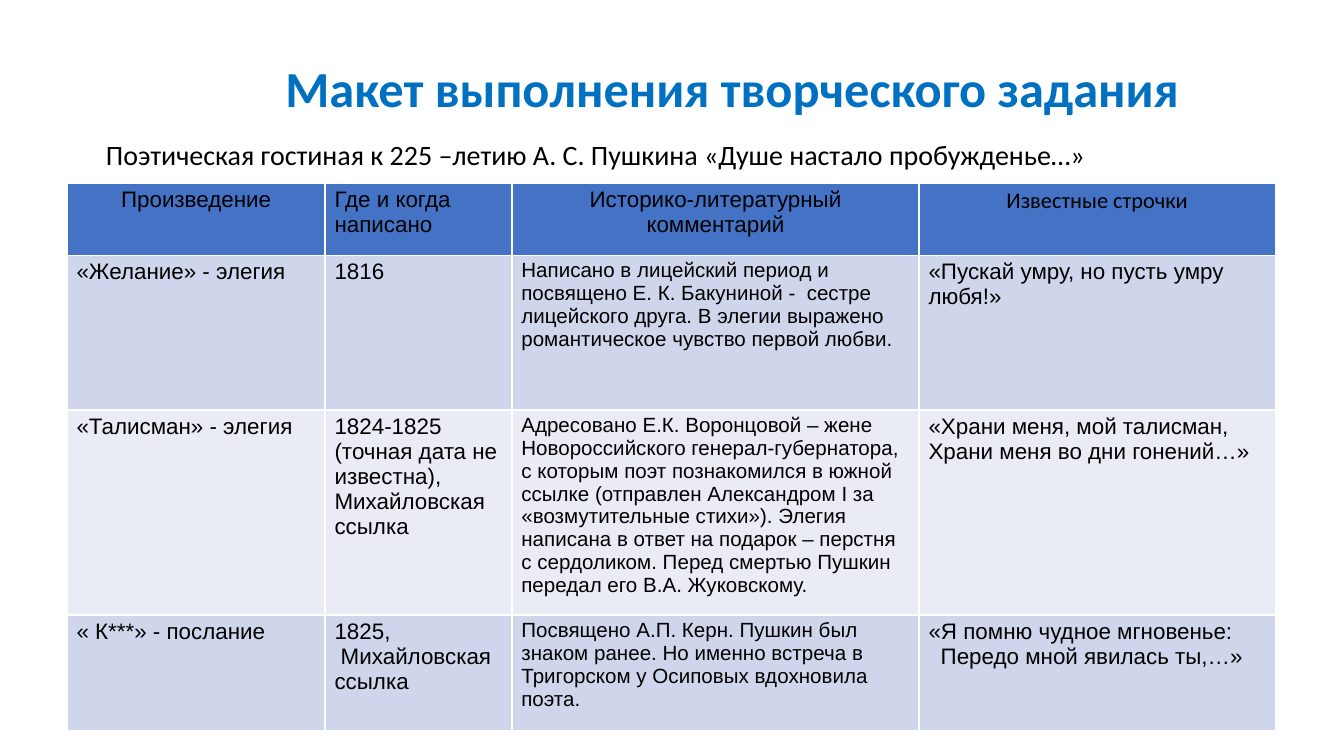
from lxml import etree
from pptx import Presentation
from pptx.dml.color import RGBColor
from pptx.enum import text
from pptx.oxml import ns
from pptx.util import Inches, Pt

COLORS = {
    "title": "0070C0",
    "text": "000000",
    "header": "4472C4",
    "odd": "CFD5EA",
    "even": "E9EBF5",
    "border": "FFFFFF",
}
LEFT, CENTER = text.PP_ALIGN.LEFT, text.PP_ALIGN.CENTER


def set_font(font, name, size, color="text", bold=False):
    font.name = name
    font.size = Pt(size)
    font.bold = bold
    font.color.rgb = RGBColor.from_string(COLORS[color])


def add_border(cell, side):
    line = etree.SubElement(cell._tc.get_or_add_tcPr(), ns.qn(f"a:ln{side}"), w=str(Pt(1)))
    fill = etree.SubElement(line, ns.qn("a:solidFill"))
    etree.SubElement(fill, ns.qn("a:srgbClr"), val=COLORS["border"])


# Widescreen slide, 16:9
prs = Presentation()
prs.slide_width = Inches(10)
prs.slide_height = Inches(10) * 9 // 16
slide = prs.slides.add_slide(prs.slide_layouts[6])

# Title, led by a larger space
title = slide.shapes.add_textbox(Inches(1.46), Inches(0.3), Inches(7.85), Inches(0.7)).text_frame
title.word_wrap = True
title.vertical_anchor = text.MSO_ANCHOR.MIDDLE
heading = title.paragraphs[0]
heading.alignment = CENTER
heading.line_spacing = 0.9
for words, *style in [
    (" ", "Arial", 33),
    ("Макет выполнения творческого задания", "Calibri", 27, "title", True),
]:
    run = heading.add_run()
    run.text = words
    set_font(run.font, *style)

# Subtitle
subtitle = slide.shapes.add_textbox(Inches(0.69), Inches(1), Inches(8.62), Inches(4.45)).text_frame
subtitle.word_wrap = True
occasion = subtitle.paragraphs[0]
occasion.text = "Поэтическая гостиная к 225 –летию А. С. Пушкина «Душе настало пробужденье…»"
occasion.alignment = text.PP_ALIGN.JUSTIFY
occasion.line_spacing = 0.9
set_font(occasion.font, "Calibri", 15)

# Table of works: a line break in a cell starts a new paragraph
works = [
    ["Произведение", "Где и когда написано", "Историко-литературный комментарий", "Известные строчки"],
    [
        "«Желание» - элегия",
        "1816",
        "Написано в лицейский период и посвящено Е. К. Бакуниной -  сестре лицейского друга. "
        "В элегии выражено романтическое чувство первой любви.",
        "«Пускай умру, но пусть умру любя!»",
    ],
    [
        "«Талисман» - элегия",
        "1824-1825 (точная дата не известна),\nМихайловская ссылка",
        "Адресовано Е.К. Воронцовой – жене Новороссийского генерал-губернатора, с которым поэт "
        "познакомился в южной ссылке (отправлен Александром I за «возмутительные стихи»). "
        "Элегия написана в ответ на подарок – перстня с сердоликом. "
        "Перед смертью Пушкин передал его В.А. Жуковскому.",
        "«Храни меня, мой талисман, Храни меня во дни гонений…»",
    ],
    [
        "« К***» - послание",
        "1825,\n Михайловская ссылка",
        "Посвящено А.П. Керн. Пушкин был знаком ранее. "
        "Но именно встреча в Тригорском у Осиповых вдохновила поэта.",
        "«Я помню чудное мгновенье:\nПередо мной явилась ты,…»",
    ],
]
col_widths = [1.92, 1.39, 3.03, 2.65]
row_heights = [0.54, 1.15, 1.52, 0.86]
header_aligns = [CENTER, LEFT, CENTER, CENTER]
COMMENT, LINES = 2, 3

table = slide.shapes.add_table(
    len(works), len(col_widths), Inches(0.5), Inches(1.36),
    Inches(sum(col_widths)), Inches(sum(row_heights)),
).table
for column, width in zip(table.columns, col_widths):
    column.width = Inches(width)
for row, height in zip(table.rows, row_heights):
    row.height = Inches(height)

for r, work in enumerate(works):
    is_header = r == 0
    band = "header" if is_header else "odd" if r % 2 else "even"
    for c, words in enumerate(work):
        cell = table.cell(r, c)
        cell.margin_left = cell.margin_right = Inches(0.07)
        cell.margin_top = cell.margin_bottom = Inches(0.03)
        for side in "LRTB":
            add_border(cell, side)
        cell.fill.solid()
        cell.fill.fore_color.rgb = RGBColor.from_string(COLORS[band])
        cell.text = words
        for paragraph in cell.text_frame.paragraphs:
            paragraph.alignment = header_aligns[c] if is_header else LEFT
            set_font(
                paragraph.font,
                "Calibri" if is_header and c == LINES else "Arial",
                11 if c == COMMENT and not is_header else 12,
            )

# Second line of the last verse is indented
verse = table.cell(3, LINES).text_frame.paragraphs[1]
verse._p.get_or_add_pPr().set("marL", str(Inches(0.09)))

prs.save("out.pptx")
